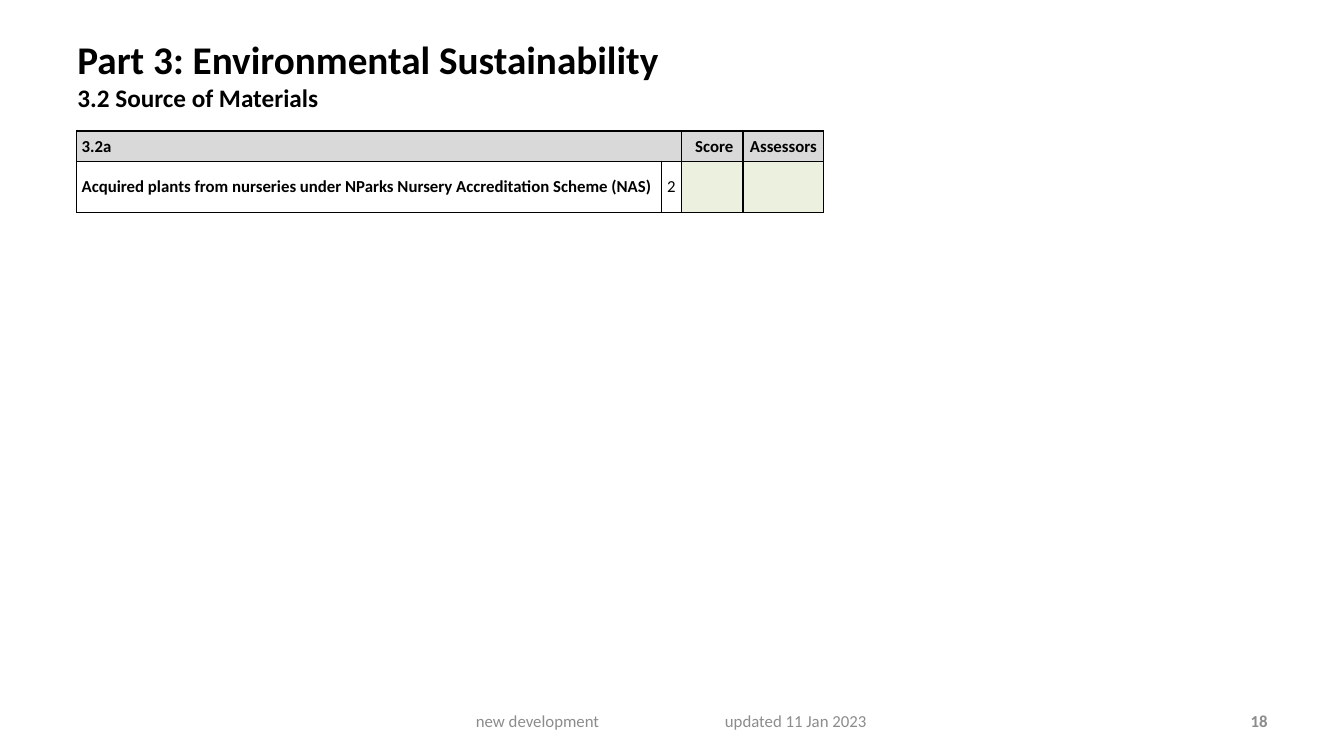
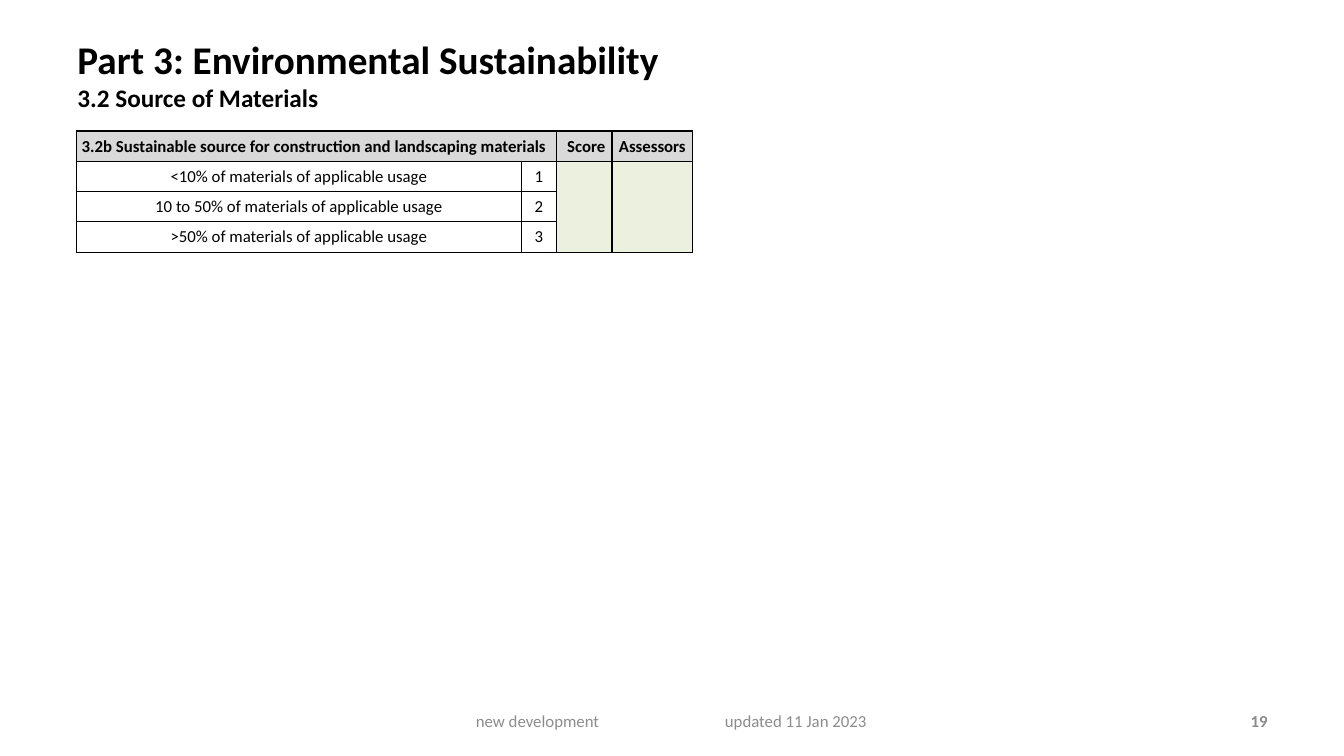
from dataclasses import dataclass

from lxml.etree import SubElement
from pptx import Presentation
from pptx.dml.color import RGBColor
from pptx.enum.text import MSO_ANCHOR, PP_ALIGN
from pptx.oxml.ns import qn
from pptx.util import Inches, Pt

# Shared style
FONT = "Calibri"
BLACK, WHITE, MUTED = "000000", "FFFFFF", "8C8C8C"
HEADER_FILL, ENTRY_FILL = "D9D9D9", "EBF1DE"
LEFT, CENTER, RIGHT = PP_ALIGN.LEFT, PP_ALIGN.CENTER, PP_ALIGN.RIGHT
TABLE_LEFT, TABLE_TOP = 0.76, 1.3
CELL_INSET = 0.05


@dataclass
class Criterion:
    text: str
    points: str


@dataclass
class ScorePage:
    number: str
    heading: str
    criteria: list[Criterion]
    widths: list[float]
    row_height: float
    criterion_bold: bool = False
    criterion_align: PP_ALIGN = CENTER


PAGES = [
    ScorePage(
        "18", "3.2a",
        [Criterion("Acquired plants from nurseries under NParks Nursery "
                   "Accreditation Scheme (NAS)", "2")],
        [5.8, 0.2, 0.61, 0.8], 0.51, criterion_bold=True, criterion_align=LEFT),
    ScorePage(
        "19", "3.2b Sustainable source for construction and landscaping materials",
        [Criterion("<10% of materials of applicable usage", "1"),
         Criterion("10 to 50% of materials of applicable usage", "2"),
         Criterion(">50% of materials of applicable usage", "3")],
        [4.41, 0.35, 0.55, 0.8], 0.3),
]


def color(value: str) -> RGBColor:
    return RGBColor.from_string(value)


def write(para, text: str, *, size: float = 12, bold: bool = False,
          fill: str = BLACK, align: PP_ALIGN = LEFT) -> None:
    para.alignment = align
    span = para.add_run()
    span.text = text
    span.font.name = FONT
    span.font.size = Pt(size)
    span.font.bold = bold
    span.font.color.rgb = color(fill)


def add_box(page, left: float, top: float, width: float, height: float,
            anchor: MSO_ANCHOR):
    box = page.shapes.add_textbox(
        Inches(left), Inches(top), Inches(width), Inches(height))
    frame = box.text_frame
    frame.word_wrap = True
    frame.vertical_anchor = anchor
    return frame


def add_tab_stop(para, position: float) -> None:
    stops = SubElement(para._p.get_or_add_pPr(), qn("a:tabLst"))
    SubElement(stops, qn("a:tab"), pos=str(Inches(position)), algn="l")


def style_cell(cell, fill: str) -> None:
    properties = cell._tc.get_or_add_tcPr()
    for side in ("lnL", "lnR", "lnT", "lnB"):
        line = SubElement(properties, qn(f"a:{side}"), w=str(Pt(1)))
        solid = SubElement(line, qn("a:solidFill"))
        SubElement(solid, qn("a:srgbClr"), val=BLACK)
    cell.fill.solid()
    cell.fill.fore_color.rgb = color(fill)
    cell.vertical_anchor = MSO_ANCHOR.MIDDLE
    cell.margin_left = cell.margin_right = Inches(CELL_INSET)
    cell.margin_top = cell.margin_bottom = Inches(CELL_INSET)
    cell.text_frame.paragraphs[0].font.size = Pt(12)


def add_title(page) -> None:
    frame = add_box(page, 0.67, 0.3, 10.36, 0.99, MSO_ANCHOR.TOP)
    write(frame.paragraphs[0], "Part 3: Environmental Sustainability",
          size=28, bold=True)
    write(frame.add_paragraph(), "3.2 Source of Materials", size=18, bold=True)


def add_footer(page, number: str) -> None:
    note = add_box(page, 4.56, 6.95, 4.22, 0.4, MSO_ANCHOR.MIDDLE)
    note.margin_left = Inches(0.16)
    para = note.paragraphs[0]
    add_tab_stop(para, 2.47)
    write(para, "new development\tupdated 11 Jan 2023", fill=MUTED)
    corner = add_box(page, 9.56, 6.95, 3.11, 0.4, MSO_ANCHOR.MIDDLE)
    write(corner.paragraphs[0], number, bold=True, fill=MUTED, align=RIGHT)


def add_score_table(page, content: ScorePage) -> None:
    heights = [0.3] + [content.row_height] * len(content.criteria)
    table = page.shapes.add_table(
        len(heights), len(content.widths), Inches(TABLE_LEFT), Inches(TABLE_TOP),
        Inches(sum(content.widths)), Inches(sum(heights))).table
    for column, width in zip(table.columns, content.widths):
        column.width = Inches(width)
    for row_index, height in enumerate(heights):
        table.rows[row_index].height = Inches(height)
        for column_index in range(len(content.widths)):
            body_fill = WHITE if column_index < 2 else ENTRY_FILL
            style_cell(table.cell(row_index, column_index),
                       body_fill if row_index else HEADER_FILL)

    def fill_cell(row: int, column: int, text: str, **style) -> None:
        write(table.cell(row, column).text_frame.paragraphs[0], text, **style)

    # Header row
    table.cell(0, 0).merge(table.cell(0, 1))
    fill_cell(0, 0, content.heading, bold=True)
    table.cell(0, 2).margin_left = Inches(0.09)
    fill_cell(0, 2, "Score", bold=True, align=CENTER)
    fill_cell(0, 3, "Assessors", bold=True, align=CENTER)

    # Criteria, with one entry cell per score column
    for row, criterion in enumerate(content.criteria, start=1):
        fill_cell(row, 0, criterion.text, bold=content.criterion_bold,
                  align=content.criterion_align)
        fill_cell(row, 1, criterion.points, align=CENTER)
    last_row = len(content.criteria)
    if last_row > 1:
        for column in (2, 3):
            table.cell(1, column).merge(table.cell(last_row, column))


def main() -> None:
    deck = Presentation()
    deck.slide_width, deck.slide_height = Inches(13.33), Inches(7.5)
    for content in PAGES:
        page = deck.slides.add_slide(deck.slide_layouts[6])
        add_title(page)
        add_score_table(page, content)
        add_footer(page, content.number)
    deck.save("out.pptx")


if __name__ == "__main__":
    main()
